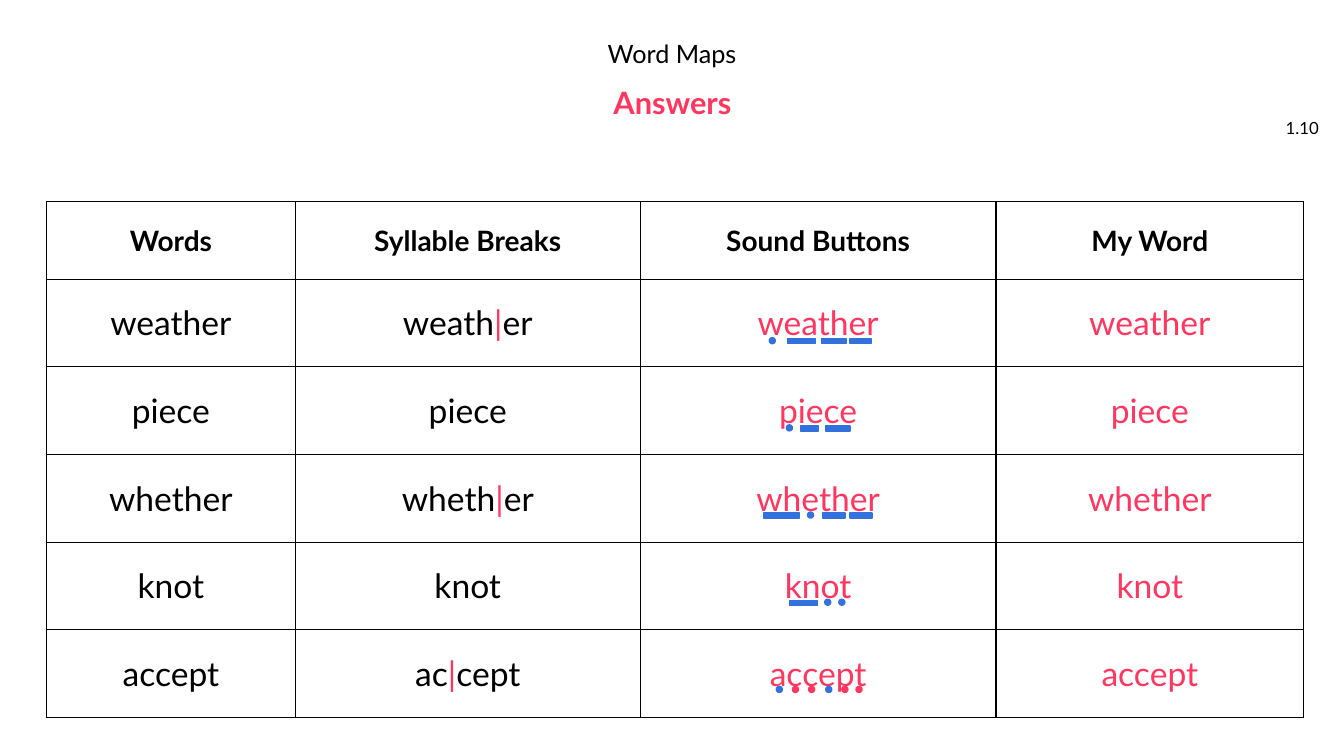
from dataclasses import dataclass

from lxml import etree
from pptx import Presentation
from pptx.dml.color import RGBColor
from pptx.enum.shapes import MSO_SHAPE
from pptx.enum.text import MSO_ANCHOR, PP_ALIGN
from pptx.oxml.ns import qn
from pptx.slide import Slide
from pptx.table import _Cell
from pptx.text.text import TextFrame, _Paragraph, _Run
from pptx.util import Emu, Inches, Pt

RECTANGLE, OVAL = MSO_SHAPE.RECTANGLE, MSO_SHAPE.OVAL
MIDDLE = MSO_ANCHOR.MIDDLE
CENTER, RIGHT = PP_ALIGN.CENTER, PP_ALIGN.RIGHT

COLORS = {"black": "000000", "white": "FFFFFF", "pink": "FF3760", "blue": "3371DD"}
FONT = "Lato"

# Grid: every length is a count of columns or rows, 100 to the inch
SLIDE_COLUMNS, SLIDE_ROWS = 1333, 750
TABLE_LEFT, TABLE_TOP = 46, 200
TABLE_COLUMNS = (247, 342, 353, 305)
HEADER_HEIGHT, WORD_HEIGHT = 77, 87
BUTTON_TOP, BUTTON_STEP = 335, 86.5
DOT_SIZE, BAR_HEIGHT, BAR_DROP = 6, 5, 1
HEADINGS = ("Words", "Syllable Breaks", "Sound Buttons", "My Word")


@dataclass(frozen=True)
class Dot:
    left: float
    color: str = "blue"


@dataclass(frozen=True)
class Bar:
    left: float
    width: float


@dataclass(frozen=True)
class WordMap:
    word: str
    syllables: str
    buttons: tuple[Dot | Bar, ...]


WORD_MAPS = (
    WordMap("weather", "weath|er", (Dot(763), Bar(781, 28), Bar(815, 24), Bar(843, 21))),
    WordMap("piece", "piece", (Dot(780), Bar(794, 18), Bar(819, 24))),
    WordMap("whether", "wheth|er", (Bar(757, 36), Dot(801), Bar(816, 22), Bar(843, 22))),
    WordMap("knot", "knot", (Bar(783, 28), Dot(818), Dot(832))),
    WordMap("accept", "ac|cept", (Dot(770), Dot(786, "pink"), Dot(802, "pink"), Dot(819),
                                  Dot(835, "pink"), Dot(849, "pink"))),
)


def grid(count: float) -> Emu:
    return Inches(count / 100)


def rgb(color: str) -> RGBColor:
    return RGBColor.from_string(COLORS[color])


def format_run(run: _Run, size: float, color: str, bold: bool) -> None:
    run.font.name = FONT
    run.font.size = Pt(size)
    run.font.bold = bold
    run.font.color.rgb = rgb(color)


def write_line(text_frame: TextFrame, text: str, size: float, color: str = "black",
               bold: bool = False, alignment: PP_ALIGN = CENTER) -> _Paragraph:
    text_frame.word_wrap = True
    text_frame.vertical_anchor = MIDDLE
    text_frame.text = text
    paragraph = text_frame.paragraphs[0]
    paragraph.alignment = alignment
    paragraph.space_before = Pt(0)
    format_run(paragraph.runs[0], size, color, bold)
    return paragraph


def add_headings(slide: Slide) -> None:
    title = slide.shapes.title
    title.left, title.top, title.width, title.height = map(grid, (382, 37, 569, 35))
    write_line(title.text_frame, "Word Maps", 18).line_spacing = 0.9

    answers = slide.shapes.add_textbox(*map(grid, (209, 84, 916, 40)))
    write_line(answers.text_frame, "Answers", 22, "pink", True).line_spacing = 0.9

    number = slide.shapes.add_textbox(*map(grid, (1255, 107, 63, 40)))
    write_line(number.text_frame, "1.10", 12, alignment=RIGHT)


def format_cell(cell: _Cell) -> None:
    cell.vertical_anchor = MIDDLE
    cell.fill.solid()
    cell.fill.fore_color.rgb = rgb("white")
    properties = cell._tc.get_or_add_tcPr()
    for position, side in enumerate(("lnL", "lnR", "lnT", "lnB")):
        border = etree.Element(qn(f"a:{side}"), w=str(Pt(1)))
        fill = etree.SubElement(border, qn("a:solidFill"))
        etree.SubElement(fill, qn("a:srgbClr"), val=COLORS["black"])
        properties.insert(position, border)


def write_syllables(cell: _Cell, syllables: str) -> None:
    first, divider, last = syllables.partition("|")
    paragraph = write_line(cell.text_frame, first, 24)
    if divider:
        for text, color in ((divider, "pink"), (last, "black")):
            run = paragraph.add_run()
            run.text = text
            format_run(run, 24, color, False)


def add_word_table(slide: Slide) -> None:
    row_heights = (HEADER_HEIGHT,) + (WORD_HEIGHT,) * len(WORD_MAPS)
    frame = slide.shapes.add_table(
        len(row_heights), len(HEADINGS), grid(TABLE_LEFT), grid(TABLE_TOP),
        grid(sum(TABLE_COLUMNS)), grid(sum(row_heights)))
    table = frame.table
    table.first_row = table.horz_banding = False
    for column, width in zip(table.columns, TABLE_COLUMNS):
        column.width = grid(width)
    for row, height in zip(table.rows, row_heights):
        row.height = grid(height)
    for cell in table.iter_cells():
        format_cell(cell)

    for cell, heading in zip(table.rows[0].cells, HEADINGS):
        write_line(cell.text_frame, heading, 20, bold=True)
    for row_index, word_map in enumerate(WORD_MAPS, start=1):
        word, syllables, sounds, my_word = table.rows[row_index].cells
        write_line(word.text_frame, word_map.word, 24)
        write_syllables(syllables, word_map.syllables)
        for answer in (sounds, my_word):
            write_line(answer.text_frame, word_map.word, 24, "pink")


def add_button(slide: Slide, button: Dot | Bar, top: float) -> None:
    if isinstance(button, Dot):
        kind, box, color = OVAL, (button.left, top, DOT_SIZE, DOT_SIZE), button.color
    else:
        kind, color = RECTANGLE, "blue"
        box = (button.left, top + BAR_DROP, button.width, BAR_HEIGHT)
    shape = slide.shapes.add_shape(kind, *map(grid, box))
    shape.shadow.inherit = False
    shape.fill.solid()
    shape.fill.fore_color.rgb = rgb(color)
    shape.line.color.rgb = rgb(color)
    shape.line.width = Pt(1)


def main() -> None:
    presentation = Presentation()
    presentation.slide_width = grid(SLIDE_COLUMNS)
    presentation.slide_height = grid(SLIDE_ROWS)
    title_only = presentation.slide_layouts.get_by_name("Title Only")
    slide = presentation.slides.add_slide(title_only)

    add_headings(slide)
    add_word_table(slide)
    # Sound buttons under the third column's words
    for index, word_map in enumerate(WORD_MAPS):
        for button in word_map.buttons:
            add_button(slide, button, BUTTON_TOP + index * BUTTON_STEP)

    presentation.save("out.pptx")


if __name__ == "__main__":
    main()
